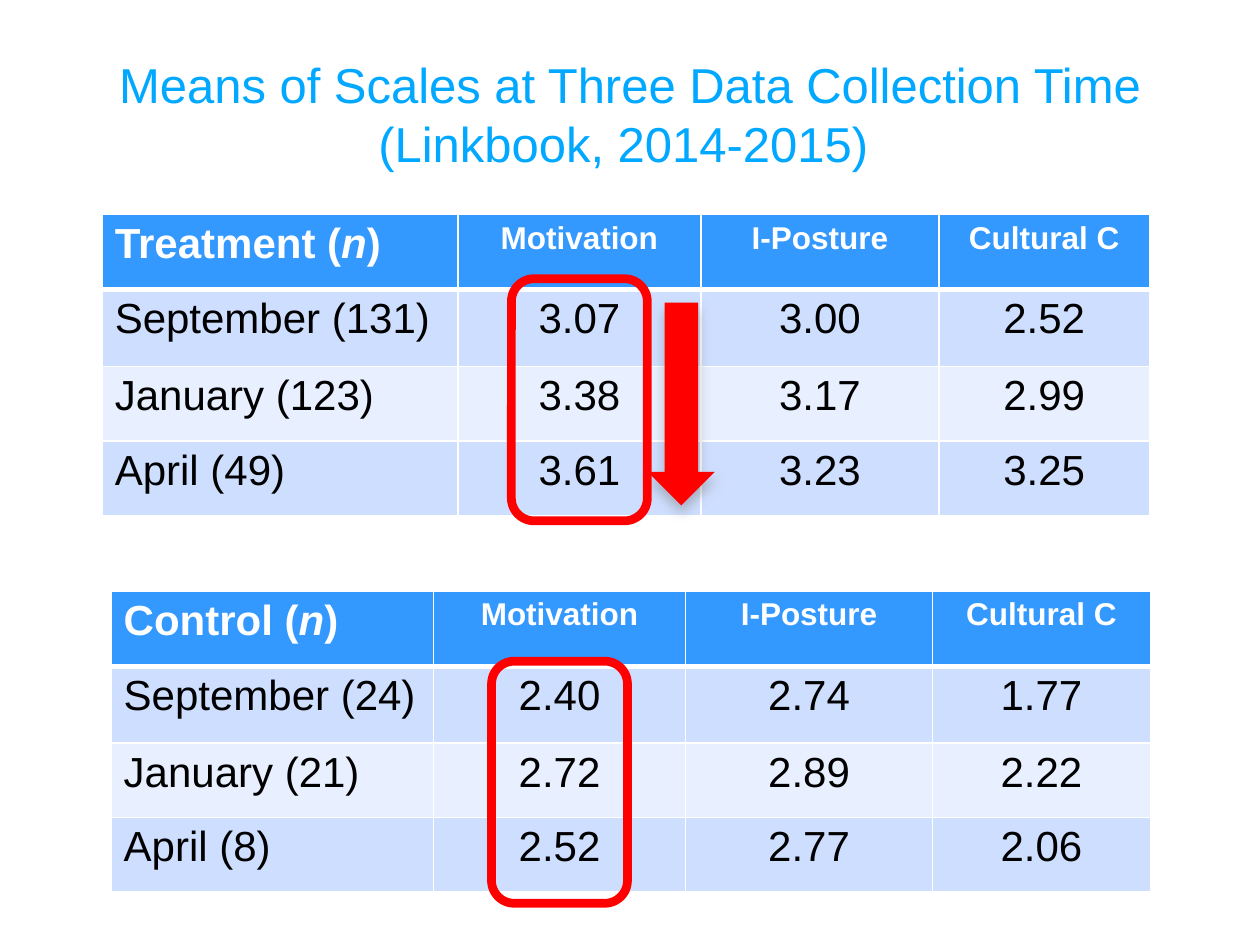
import pptx
import pptx.util
import pptx.dml.color
import pptx.enum.shapes
import pptx.enum.text
import pptx.oxml
import pptx.oxml.ns

Cm = pptx.util.Cm
Pt = pptx.util.Pt
RGBColor = pptx.dml.color.RGBColor
SHAPES = pptx.enum.shapes.MSO_SHAPE
CENTER = pptx.enum.text.PP_ALIGN.CENTER

WHITE = RGBColor(0xFF, 0xFF, 0xFF)
BLACK = RGBColor(0x00, 0x00, 0x00)
RED = RGBColor(0xFF, 0x00, 0x00)
TITLE_BLUE = RGBColor(0x00, 0xA8, 0xFF)
HEADER_BLUE = RGBColor(0x33, 0x99, 0xFF)
BAND_DARK = RGBColor(0xCE, 0xDE, 0xFF)
BAND_LIGHT = RGBColor(0xE8, 0xEF, 0xFF)

SCALES = ["Motivation", "I-Posture", "Cultural C"]
ROW_HEIGHTS = [1.52, 1.55, 1.5, 1.5]
HIGHLIGHT_WIDTH = 2.74
HIGHLIGHT_HEIGHT = 4.88


def add_run(paragraph, text, size, color, bold=False, italic=False):
    run = paragraph.add_run()
    run.text = text
    run.font.name = "Arial"
    run.font.size = Pt(size)
    run.font.color.rgb = color
    run.font.bold = bold
    run.font.italic = italic


def set_borders(cell, bottom_width):
    properties = cell._tc.get_or_add_tcPr()
    widths = {"lnL": 1, "lnR": 1, "lnT": 1, "lnB": bottom_width}
    for position, (tag, width) in enumerate(widths.items()):
        border = pptx.oxml.parse_xml(
            f'<a:{tag} {pptx.oxml.ns.nsdecls("a")} w="{Pt(width)}">'
            f'<a:solidFill><a:srgbClr val="{WHITE}"/></a:solidFill></a:{tag}>'
        )
        properties.insert(position, border)


def fill_cell(cell, color, bottom_width=1):
    cell.fill.solid()
    cell.fill.fore_color.rgb = color
    set_borders(cell, bottom_width)


def add_title(slide, left, top, width, height):
    box = slide.shapes.add_textbox(Cm(left), Cm(top), Cm(width), Cm(height))
    frame = box.text_frame
    frame.word_wrap = False
    frame.auto_size = pptx.enum.text.MSO_AUTO_SIZE.SHAPE_TO_FIT_TEXT
    lines = ["Means of Scales at Three Data Collection Time", "(Linkbook, 2014-2015) "]
    for index, line in enumerate(lines):
        paragraph = frame.add_paragraph() if index else frame.paragraphs[0]
        paragraph.alignment = CENTER
        add_run(paragraph, line, 28, TITLE_BLUE)


def add_means_table(slide, left, top, column_widths, group, means):
    table = slide.shapes.add_table(
        len(ROW_HEIGHTS), len(column_widths), Cm(left), Cm(top),
        Cm(sum(column_widths)), Cm(sum(ROW_HEIGHTS)),
    ).table
    for column, width in zip(table.columns, column_widths):
        column.width = Cm(width)
    for row, height in zip(table.rows, ROW_HEIGHTS):
        row.height = Cm(height)

    corner = table.cell(0, 0)
    fill_cell(corner, HEADER_BLUE, 3)
    for text, italic in [(f"{group} (", False), ("n", True), (")", False)]:
        add_run(corner.text_frame.paragraphs[0], text, 24, WHITE, True, italic)
    for column, scale in enumerate(SCALES, 1):
        cell = table.cell(0, column)
        fill_cell(cell, HEADER_BLUE, 3)
        cell.text_frame.paragraphs[0].alignment = CENTER
        add_run(cell.text_frame.paragraphs[0], scale, 18, WHITE, True)

    for row, values in enumerate(means, 1):
        for column, value in enumerate(values):
            cell = table.cell(row, column)
            fill_cell(cell, BAND_DARK if row % 2 else BAND_LIGHT)
            paragraph = cell.text_frame.paragraphs[0]
            if column:
                paragraph.alignment = CENTER
            add_run(paragraph, value, 24, BLACK)


def add_motivation_highlight(slide, left, top, column_widths, drop):
    offset = column_widths[0] + (column_widths[1] - HIGHLIGHT_WIDTH) / 2
    outline = slide.shapes.add_shape(
        SHAPES.ROUNDED_RECTANGLE, Cm(left + offset), Cm(top + drop),
        Cm(HIGHLIGHT_WIDTH), Cm(HIGHLIGHT_HEIGHT),
    )
    outline.shadow.inherit = False
    outline.fill.background()
    outline.line.color.rgb = RED
    outline.line.width = Pt(5)


def add_trend_arrow(slide, left, top, width, height):
    arrow = slide.shapes.add_shape(
        SHAPES.DOWN_ARROW, Cm(left), Cm(top), Cm(width), Cm(height)
    )
    arrow.shadow.inherit = False
    arrow.fill.solid()
    arrow.fill.fore_color.rgb = RED
    arrow.line.fill.background()
    effects = arrow._element.spPr.find(pptx.oxml.ns.qn("a:effectLst"))
    effects.append(pptx.oxml.parse_xml(
        f'<a:outerShdw {pptx.oxml.ns.nsdecls("a")} blurRad="{Pt(7)}" dist="{Pt(4)}" '
        'dir="5400000" rotWithShape="0"><a:srgbClr val="808080">'
        '<a:alpha val="50000"/></a:srgbClr></a:outerShdw>'
    ))


def main():
    presentation = pptx.Presentation()
    presentation.slide_width = Cm(25.4)
    presentation.slide_height = Cm(19.05)
    slide = presentation.slides.add_slide(presentation.slide_layouts[6])

    treatment_box = (2.06, 4.32, [7.17, 4.9, 4.8, 4.24])
    control_box = (2.24, 11.91, [6.5, 5.08, 4.98, 4.39])
    treatment_means = [
        ("September (131)", "3.07", "3.00", "2.52"),
        ("January (123)", "3.38", "3.17", "2.99"),
        ("April (49)", "3.61", "3.23", "3.25"),
    ]
    control_means = [
        ("September (24)", "2.40", "2.74", "1.77"),
        ("January (21)", "2.72", "2.89", "2.22"),
        ("April (8)", "2.52", "2.77", "2.06"),
    ]

    add_means_table(slide, *treatment_box, "Treatment", treatment_means)
    add_title(slide, 2.03, 0.97, 21.34, 2.64)
    add_means_table(slide, *control_box, "Control", control_means)
    add_motivation_highlight(slide, *control_box, 1.42)
    add_trend_arrow(slide, 13.06, 6.1, 1.35, 4.09)
    add_motivation_highlight(slide, *treatment_box, 1.3)

    presentation.save("out.pptx")


if __name__ == "__main__":
    main()
